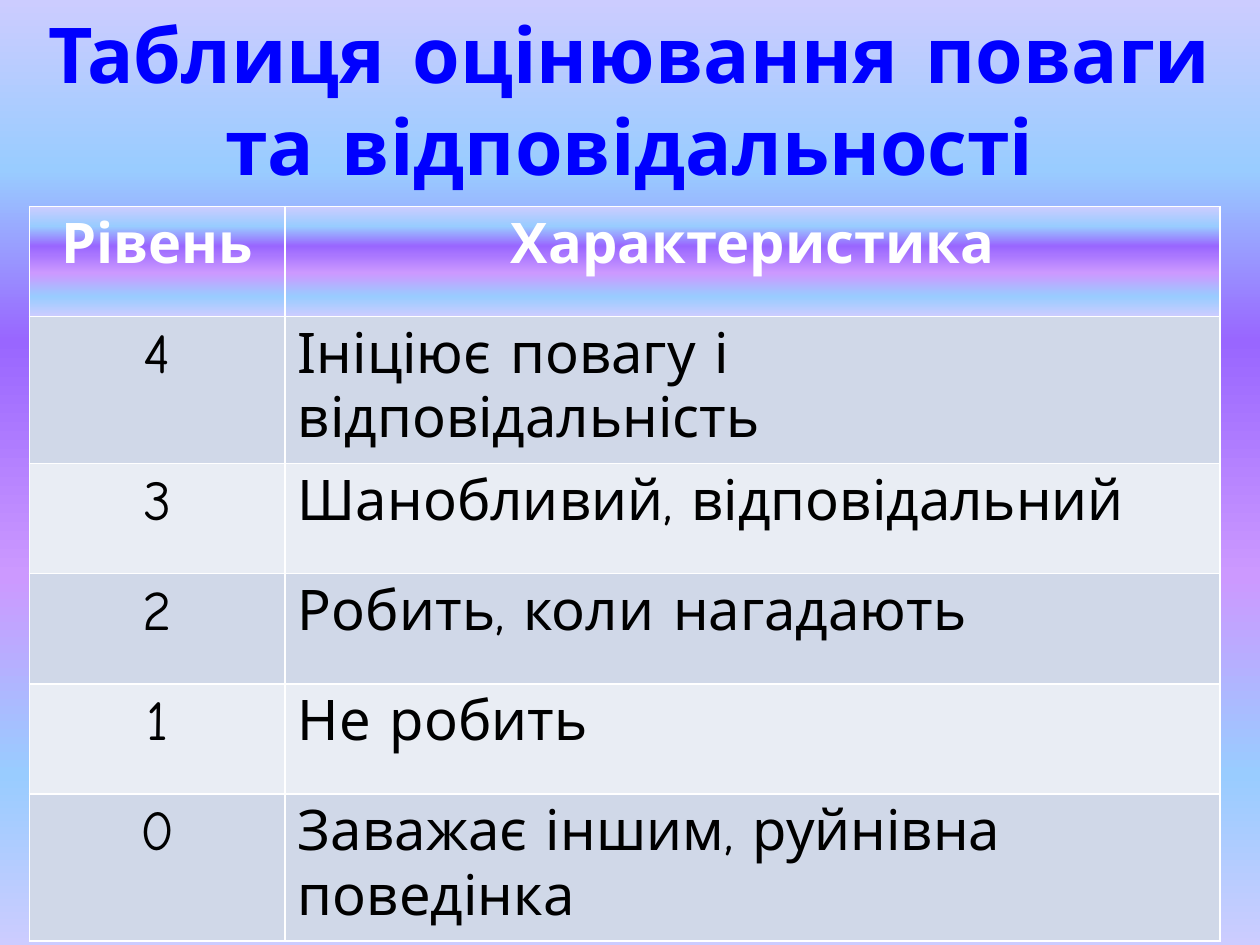
"""Build a slide with a grading table for respect and responsibility."""
from lxml.etree import SubElement
from pptx import Presentation
from pptx.dml.color import RGBColor
from pptx.enum.text import MSO_AUTO_SIZE as AutoSize, PP_ALIGN as Align
from pptx.oxml.ns import qn
from pptx.util import Cm, Pt

BLUE = RGBColor(0x00, 0x00, 0xFF)
WHITE = RGBColor(0xFF, 0xFF, 0xFF)
BLACK = RGBColor(0x00, 0x00, 0x00)
BAND_DARK = RGBColor(0xD0, 0xD8, 0xE8)
BAND_LIGHT = RGBColor(0xE9, 0xED, 0xF4)
LILAC = RGBColor(0xCC, 0xCC, 0xFF)
SKY = RGBColor(0x99, 0xCC, 0xFF)
VIOLET = RGBColor(0x99, 0x66, 0xFF)
ORCHID = RGBColor(0xCC, 0x99, 0xFF)
RAINBOW = [(0, LILAC), (18, SKY), (36, VIOLET), (61, ORCHID), (82, SKY), (100, LILAC)]


def write(frame, text, size=32, color=BLACK, bold=False, align=Align.LEFT):
    para = frame.paragraphs[0]
    para.alignment = align
    span = para.add_run()
    span.text = text
    span.font.name = "Comic Neue"
    span.font.size = Pt(size)
    span.font.bold = bold
    span.font.color.rgb = color


def fill_rainbow(fill, element):
    fill.gradient()
    fill.gradient_angle = 270
    stops = element.xpath(".//a:gsLst")[0]
    for stop in list(stops):
        stops.remove(stop)
    for percent, color in RAINBOW:
        stop = SubElement(stops, qn("a:gs"), pos=str(percent * 1000))
        SubElement(stop, qn("a:srgbClr"), val=str(color))


deck = Presentation()
deck.slide_width, deck.slide_height = Cm(25.4), Cm(19.05)
page = deck.slides.add_slide(deck.slide_layouts[6])
fill_rainbow(page.background.fill, page.element)

title = page.shapes.add_textbox(0, 0, Cm(25.4), Cm(4.01)).text_frame
title.word_wrap = True
title.auto_size = AutoSize.SHAPE_TO_FIT_TEXT
write(title, "Таблиця оцінювання поваги та відповідальності",
      size=44, color=BLUE, bold=True, align=Align.CENTER)

levels = [
    ("Рівень", "Характеристика"),
    ("4", "Ініціює повагу і відповідальність"),
    ("3", "Шанобливий, відповідальний"),
    ("2", "Робить, коли нагадають"),
    ("1", "Не робить"),
    ("0", "Заважає іншим, руйнівна поведінка"),
]
row_height = Cm(2.22)
table = page.shapes.add_table(len(levels), 2, Cm(0.59), Cm(4.16),
                              Cm(24), row_height * len(levels)).table
table.columns[0].width, table.columns[1].width = Cm(5.16), Cm(18.84)

for row, texts in enumerate(levels):
    header = row == 0
    for column, text in enumerate(texts):
        cell = table.cell(row, column)
        if header:
            fill_rainbow(cell.fill, cell._tc)
        else:
            cell.fill.solid()
            cell.fill.fore_color.rgb = BAND_DARK if row % 2 else BAND_LIGHT
        write(cell.text_frame, text, color=WHITE if header else BLACK, bold=header,
              align=Align.CENTER if header or column == 0 else Align.LEFT)

deck.save("out.pptx")
